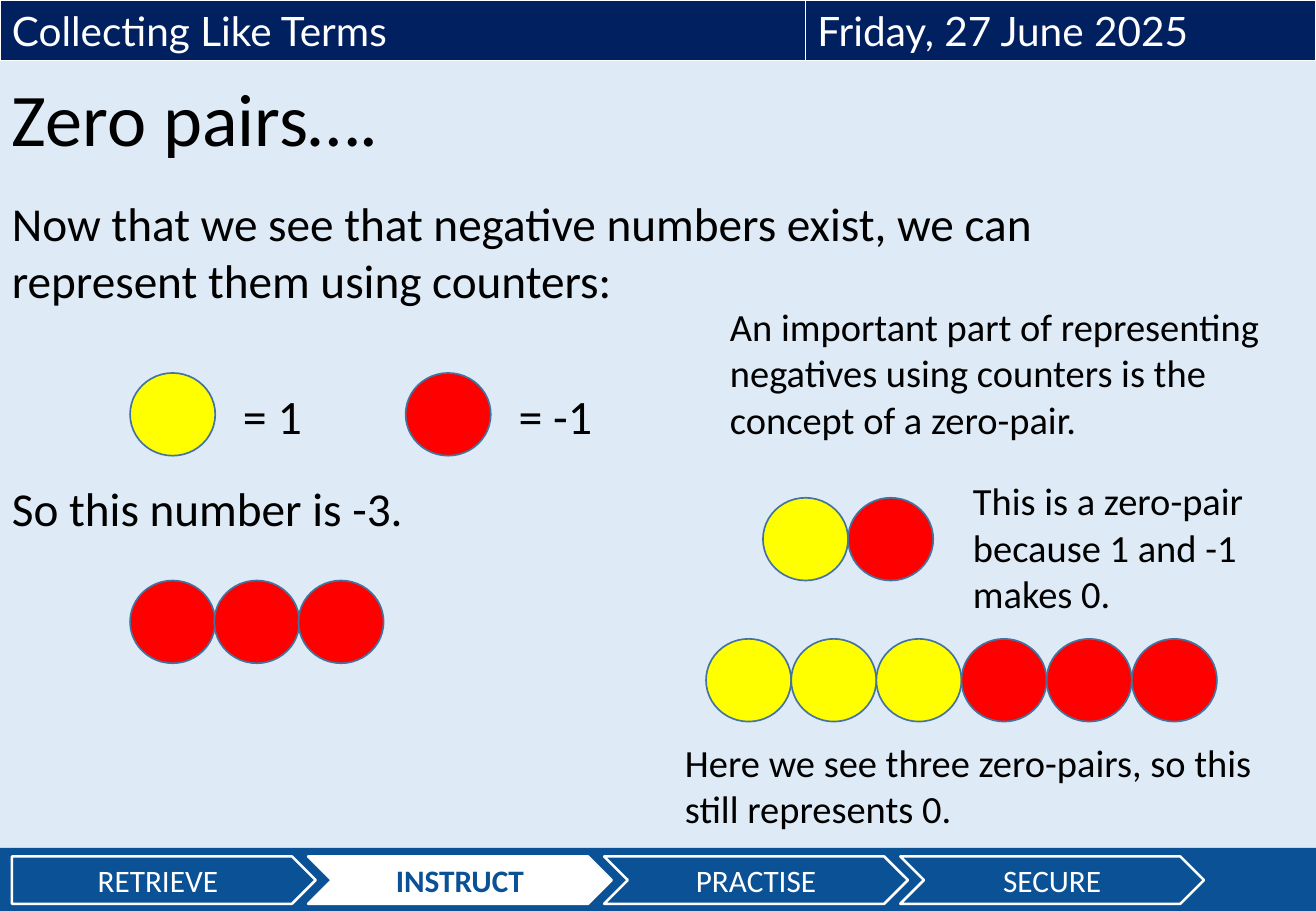
"""Build the zero pairs slide with counters and a lesson step bar."""
from dataclasses import dataclass
from pptx import Presentation
from pptx.dml.color import RGBColor as Rgb
from pptx.enum.shapes import MSO_SHAPE as Kind
from pptx.enum.text import MSO_ANCHOR as Anchor, PP_ALIGN as Align
from pptx.util import Cm, Pt


@dataclass
class Theme:
    """Hold the colours, fonts and type sizes."""
    back: str = "DEEBF7"
    navy: str = "002060"
    blue: str = "0B5196"
    edge: str = "43739E"
    white: str = "FFFFFF"
    black: str = "000000"
    plus: str = "FFFF00"
    minus: str = "FF0000"
    font: str = "Calibri"
    head: str = "Lato"
    title: float = 44
    body: float = 28
    label: float = 28.4
    note: float = 22.8
    bar: float = 24
    step: float = 18.5


theme = Theme()
deck = Presentation()
deck.slide_width, deck.slide_height = Cm(27.51), Cm(19.05)
slide = deck.slides.add_slide(deck.slide_layouts[6])
slide.background.fill.solid()
slide.background.fill.fore_color.rgb = Rgb.from_string(theme.back)


def draw(kind, x, y, w, h, fill, line=None, width=1):
    """Add a filled preset shape."""
    shape = slide.shapes.add_shape(kind, Cm(x), Cm(y), Cm(w), Cm(h))
    shape.shadow.inherit = False
    shape.fill.solid()
    shape.fill.fore_color.rgb = Rgb.from_string(fill)
    if line:
        shape.line.color.rgb = Rgb.from_string(line)
        shape.line.width = Pt(width)
    else:
        shape.line.fill.background()
    return shape


def write(text, box=None, shape=None, size=theme.note, font=theme.font, color=theme.black,
          bold=False, align=Align.LEFT, anchor=Anchor.TOP, space=1.0):
    """Put text in a shape, or in a new text box."""
    shape = shape or slide.shapes.add_textbox(*map(Cm, box))
    frame = shape.text_frame
    frame.word_wrap = True
    frame.vertical_anchor = anchor
    para = frame.paragraphs[0]
    para.text = text
    para.alignment = align
    para.line_spacing = space
    face = para.runs[0].font
    face.name, face.size, face.bold = font, Pt(size), bold
    face.color.rgb = Rgb.from_string(color)


for text, x, w in [("Collecting Like Terms", 0, 18.34), ("Friday, 27 June 2025", 16.84, 10.67)]:
    bar = draw(Kind.RECTANGLE, x, 0, w, 1.27, theme.navy, theme.white, 0.75)
    write(text, shape=bar, size=theme.bar, font=theme.head, color=theme.white)

draw(Kind.RECTANGLE, 0, 17.73, 27.51, 1.32, theme.blue)
for i, text in enumerate(["RETRIEVE", "INSTRUCT", "PRACTISE", "SECURE"]):
    now = text == "INSTRUCT"
    fill, ink = (theme.white, theme.blue) if now else (theme.blue, theme.white)
    kind = Kind.CHEVRON if i else Kind.PENTAGON
    step = draw(kind, 0.25 + 6.19 * i, 17.91, 6.35, 0.99, fill, theme.white, 1.5)
    write(text, shape=step, size=theme.step, color=ink, bold=now,
          align=Align.CENTER, anchor=Anchor.MIDDLE)

write("Zero pairs….", (0, 1.6, 23.72, 2.24), size=theme.title, space=0.9)
write("Now that we see that negative numbers exist, we can represent them using counters:",
      (0, 3.94, 23.72, 2.6), size=theme.body)
write("So this number is -3.", (0, 9.9, 14, 1.47), size=theme.body)
write("= 1", (4.83, 7.95, 4.17, 1.47), size=theme.label)
write("= -1", (10.59, 7.95, 4.17, 1.47), size=theme.label)
write("An important part of representing negatives using counters is the concept of a zero-pair.",
      (15.01, 6.22, 11.99, 3.18))
write("This is a zero-pair because 1 and -1 makes 0.", (20.09, 9.86, 6.91, 3.18))
write("Here we see three zero-pairs, so this still represents 0.", (14.07, 15.32, 13.21, 2.21))

rows = [
    (2.72, 7.8, 5.76, "+-"),
    (2.72, 12.14, 1.76, "---"),
    (15.95, 10.41, 1.78, "+-"),
    (14.76, 13.36, 1.78, "+++---"),
]
for x, y, gap, signs in rows:
    for i, sign in enumerate(signs):
        fill = theme.plus if sign == "+" else theme.minus
        draw(Kind.OVAL, x + gap * i, y, 1.78, 1.73, fill, theme.edge)

deck.save("out.pptx")
